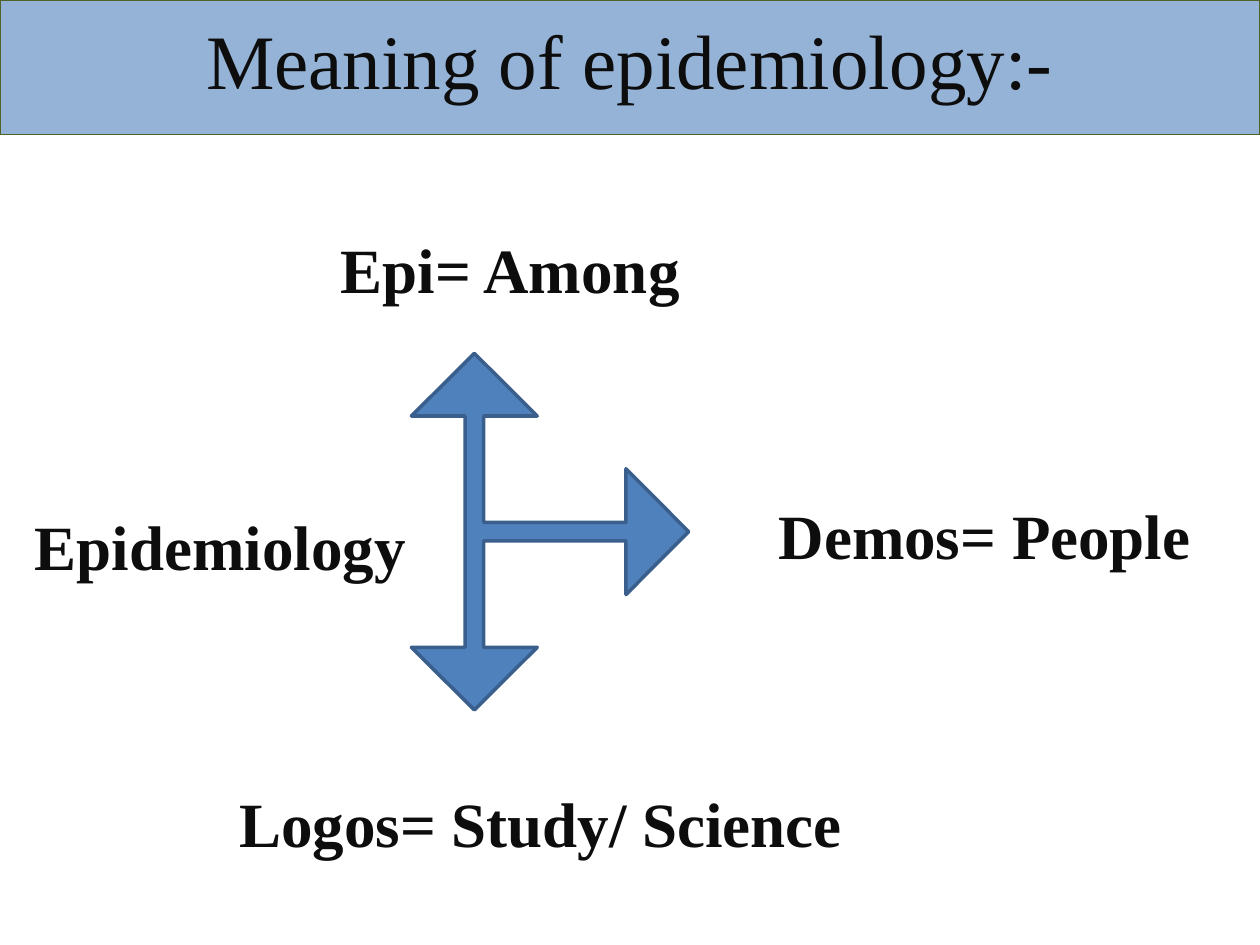
from dataclasses import dataclass

from pptx import Presentation
from pptx import util as u
from pptx.dml.color import RGBColor
from pptx.enum import shapes, text


@dataclass(frozen=True)
class Theme:
    font: str = "Times New Roman"
    ink: str = "0D0D0D"
    banner_fill: str = "95B3D7"
    banner_line: str = "4F6228"
    arrow_fill: str = "4F81BD"
    arrow_line: str = "3A5F8C"
    title_size: int = 44
    label_size: int = 36


class SlideBuilder:
    def __init__(self, slide, theme):
        self.slide = slide
        self.theme = theme

    def shape(self, kind, box, fill=None, line=None, width=0):
        shape = self.slide.shapes.add_shape(kind, *map(u.Inches, box))
        shape.shadow.inherit = False
        if fill:
            shape.fill.solid()
            shape.fill.fore_color.rgb = RGBColor.from_string(fill)
        else:
            shape.fill.background()
        if line:
            shape.line.color.rgb = RGBColor.from_string(line)
            shape.line.width = u.Pt(width)
        else:
            shape.line.fill.background()
        return shape

    def add_words(self, shape, words, size, bold=False):
        paragraph = shape.text_frame.paragraphs[0]
        paragraph.alignment = text.PP_ALIGN.CENTER
        run = paragraph.add_run()
        run.text = words
        run.font.name = self.theme.font
        run.font.size = u.Pt(size)
        run.font.bold = bold
        run.font.color.rgb = RGBColor.from_string(self.theme.ink)

    def banner(self, words, box):
        theme = self.theme
        shape = self.shape(shapes.MSO_SHAPE.RECTANGLE, box,
                           theme.banner_fill, theme.banner_line, 0.75)
        frame = shape.text_frame
        frame.word_wrap = True
        frame.vertical_anchor = text.MSO_ANCHOR.TOP
        frame.margin_top = u.Inches(0.1)
        self.add_words(shape, words, theme.title_size)

    def three_way_arrow(self, box, adjustments):
        theme = self.theme
        shape = self.shape(shapes.MSO_SHAPE.LEFT_RIGHT_UP_ARROW, box,
                           theme.arrow_fill, theme.arrow_line, 2)
        shape.rotation = 90
        for index, value in enumerate(adjustments):
            shape.adjustments[index] = value

    def label(self, words, box, kind=None):
        if kind is None:
            shape = self.slide.shapes.add_textbox(*map(u.Inches, box))
        else:
            shape = self.shape(kind, box)
        frame = shape.text_frame
        frame.word_wrap = False
        frame.auto_size = text.MSO_AUTO_SIZE.SHAPE_TO_FIT_TEXT
        frame.vertical_anchor = text.MSO_ANCHOR.TOP
        self.add_words(shape, words, self.theme.label_size, bold=True)


def main():
    presentation = Presentation()
    presentation.slide_width = u.Inches(10)
    presentation.slide_height = u.Inches(7.5)
    slide = presentation.slides.add_slide(presentation.slide_layouts[6])
    builder = SlideBuilder(slide, Theme())

    # Title banner
    builder.banner("Meaning of epidemiology:-", (0, 0, 10, 1.07))

    # Arrow from the word to its three roots
    builder.three_way_arrow((2.95, 3.12, 2.83, 2.2), (0.067, 0.227, 0.226))

    # The word and its roots
    oval = shapes.MSO_SHAPE.OVAL
    builder.label("Demos= People", (5.35, 3.75, 4.93, 0.99), oval)
    builder.label("Logos= Study/ Science", (0.75, 6.03, 7.08, 0.99), oval)
    builder.label("Epidemiology", (0.1, 3.91, 3.3, 1.45),
                  shapes.MSO_SHAPE.ROUNDED_RECTANGLE)
    builder.label("Epi= Among", (2.59, 1.78, 2.92, 0.71))

    presentation.save("out.pptx")


if __name__ == "__main__":
    main()
